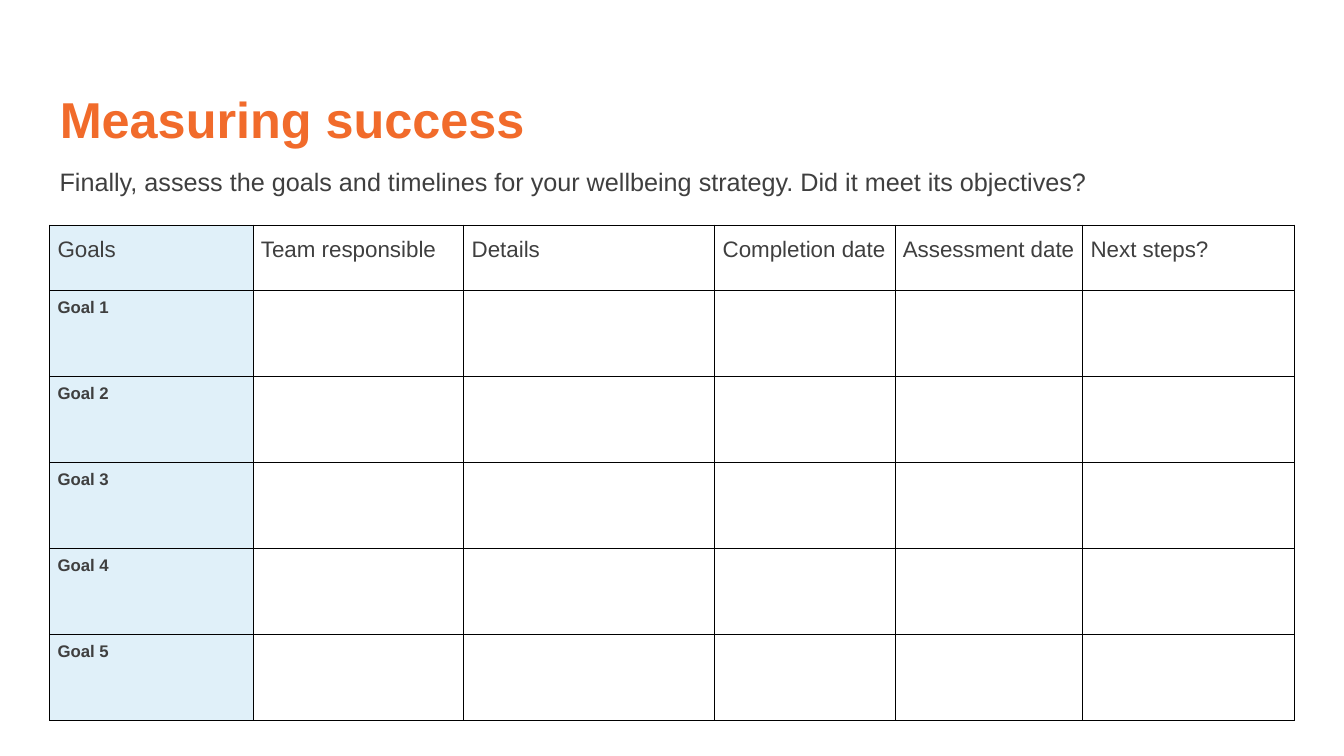
from dataclasses import dataclass

from lxml import etree
from pptx import Presentation
from pptx.dml.color import RGBColor
from pptx.enum import text
from pptx.oxml import ns
from pptx.util import Pt


@dataclass(frozen=True)
class Theme:
    font: str = "Arial"
    orange: str = "F16B2B"
    ink: str = "3F3F3F"
    tint: str = "E0F0F9"
    white: str = "FFFFFF"
    rule: str = "000000"
    title: float = 36
    lead: float = 18
    head: float = 16
    goal: float = 12
    line: float = 0.75


@dataclass(frozen=True)
class Column:
    head: str
    width: float


THEME = Theme()
LEFT = 35.5
WIDTH = 828
HEAD_ROW = 46.6
GOAL_ROW = 61.4
GOALS = 5
COLUMNS = (
    Column("Goals", 145.3),
    Column("Team responsible", 150.6),
    Column("Details", 179.3),
    Column("Completion date", 128.7),
    Column("Assessment date", 134.1),
    Column("Next steps?", 151.3),
)


def write(frame, words: str, size: float, color: str, bold: bool = False,
          spacing: float = 1.0) -> None:
    para = frame.paragraphs[0]
    para.text = words
    para.alignment = text.PP_ALIGN.LEFT
    para.line_spacing = spacing
    font = para.font
    font.name, font.size, font.bold = THEME.font, Pt(size), bold
    font.color.rgb = RGBColor.from_string(color)


def border(cell) -> None:
    props = cell._tc.get_or_add_tcPr()
    for side in ("a:lnL", "a:lnR", "a:lnT", "a:lnB"):
        line = etree.SubElement(props, ns.qn(side), w=str(Pt(THEME.line)))
        fill = etree.SubElement(line, ns.qn("a:solidFill"))
        etree.SubElement(fill, ns.qn("a:srgbClr"), val=THEME.rule)


def style(cell, color: str, top: float, bottom: float) -> None:
    border(cell)
    cell.fill.solid()
    cell.fill.fore_color.rgb = RGBColor.from_string(color)
    cell.margin_left = cell.margin_right = Pt(5.6)
    cell.margin_top, cell.margin_bottom = Pt(top), Pt(bottom)


def add_title(slide) -> None:
    title = slide.shapes.title
    title.left, title.top = Pt(LEFT), Pt(35.3)
    title.width, title.height = Pt(WIDTH), Pt(104.4)
    title.text_frame.vertical_anchor = text.MSO_ANCHOR.MIDDLE
    write(title.text_frame, "Measuring success", THEME.title, THEME.orange,
          bold=True, spacing=0.9)


def add_lead(slide) -> None:
    box = slide.shapes.add_textbox(Pt(LEFT), Pt(116.6), Pt(WIDTH), Pt(23))
    box.text_frame.word_wrap = True
    write(box.text_frame,
          "Finally, assess the goals and timelines for your wellbeing "
          "strategy. Did it meet its objectives?",
          THEME.lead, THEME.ink, spacing=0.95)


def add_plan(slide) -> None:
    """Add the table of goals: one heading row, then a row per goal."""
    width = sum(col.width for col in COLUMNS)
    table = slide.shapes.add_table(
        GOALS + 1, len(COLUMNS), Pt(LEFT), Pt(160.8), Pt(width),
        Pt(HEAD_ROW + GOALS * GOAL_ROW)).table
    table.first_row = table.horz_banding = False
    for index, row in enumerate(table.rows):
        row.height = Pt(GOAL_ROW if index else HEAD_ROW)
        for place, cell in enumerate(row.cells):
            color = THEME.white if place else THEME.tint
            if index:
                style(cell, color, 5.6, 5.6)
            else:
                style(cell, color, 8.6, 7.2)
                write(cell.text_frame, COLUMNS[place].head, THEME.head,
                      THEME.ink)
        if index:
            write(row.cells[0].text_frame, f"Goal {index}", THEME.goal,
                  THEME.ink, bold=True)
    for slot, col in zip(table.columns, COLUMNS):
        slot.width = Pt(col.width)


def main() -> None:
    deck = Presentation()
    deck.slide_width, deck.slide_height = Pt(960), Pt(540)
    slide = deck.slides.add_slide(deck.slide_layouts.get_by_name("Title Only"))
    add_title(slide)
    add_plan(slide)
    add_lead(slide)
    deck.save("out.pptx")


if __name__ == "__main__":
    main()
